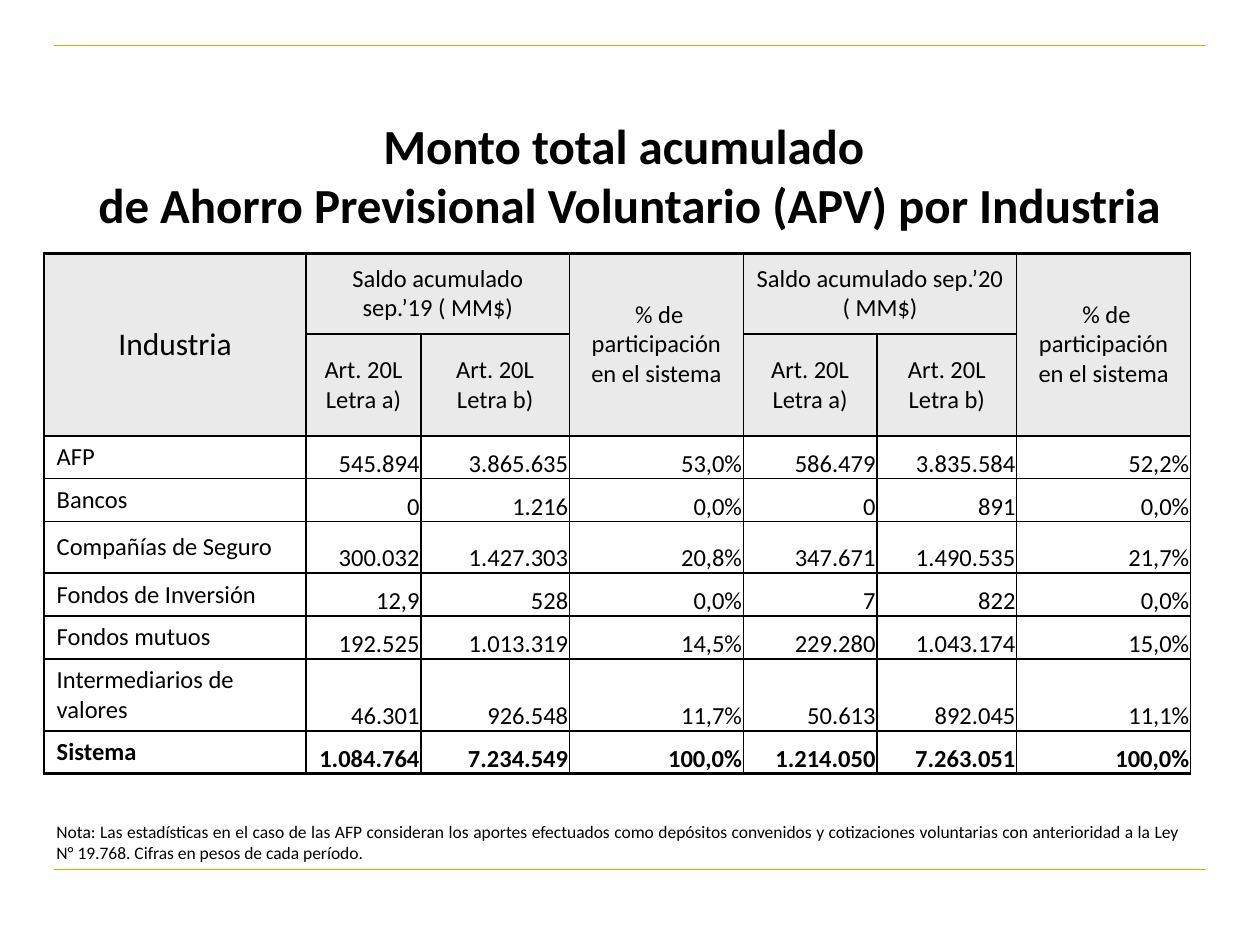
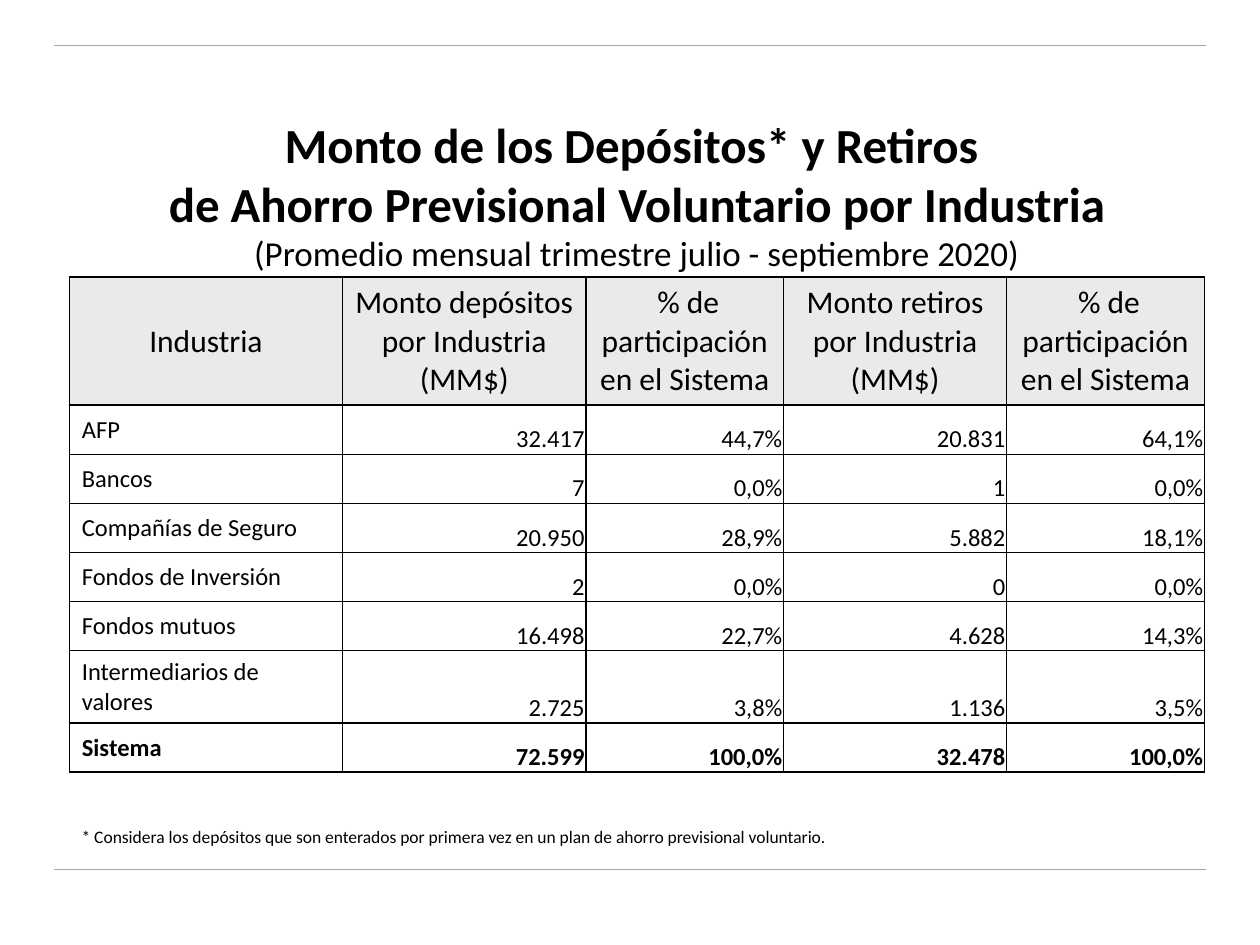
from copy import deepcopy
from dataclasses import dataclass

from lxml import etree
from pptx import Presentation
from pptx.dml.color import RGBColor
from pptx.enum import shapes, text
from pptx.oxml import ns
from pptx.util import Inches, Pt


@dataclass(frozen=True)
class Theme:
    font: str = "Calibri"
    ink: str = "000000"
    rule: str = "FF9900"
    header: str = "EAEAEA"
    body: str = "FFFFFF"
    title: int = 28
    subtitle: int = 20
    heading: int = 18
    cell: int = 14
    note: int = 10


theme = Theme()
LEFT, CENTER, RIGHT, JUSTIFY = (
    text.PP_ALIGN.LEFT, text.PP_ALIGN.CENTER, text.PP_ALIGN.RIGHT, text.PP_ALIGN.JUSTIFY)
MIDDLE, BOTTOM = text.MSO_ANCHOR.MIDDLE, text.MSO_ANCHOR.BOTTOM


def write_text(frame, content, size=theme.cell, bold=False, align=LEFT):
    """Write content: a newline starts a paragraph, a vertical tab breaks a line."""
    for index, block in enumerate(content.split("\n")):
        para = frame.paragraphs[0] if index == 0 else frame.add_paragraph()
        para.alignment = align
        for number, line in enumerate(block.split("\v")):
            if number:
                para.add_line_break()
                para._p[-1].append(deepcopy(span._r.rPr))
            span = para.add_run()
            span.text = line
            span.font.name = theme.font
            span.font.size = Pt(size)
            span.font.bold = bold
            span.font.color.rgb = RGBColor.from_string(theme.ink)


def set_borders(cell, top=1, bottom=1):
    """Draw the four cell borders, widths in points."""
    props = cell._tc.get_or_add_tcPr()
    for side, width in (("L", 1), ("R", 1), ("T", top), ("B", bottom)):
        line = etree.SubElement(props, ns.qn("a:ln" + side), w=str(Pt(width)))
        fill = etree.SubElement(line, ns.qn("a:solidFill"))
        etree.SubElement(fill, ns.qn("a:srgbClr"), val=theme.ink)


# Content of the two slides
industries = ["AFP", "Bancos", "Compañías de Seguro", "Fondos de Inversión",
              "Fondos mutuos", "Intermediarios de valores", "Sistema"]
share = " % de\nparticipación en el sistema"
letters = ["Art. 20L\nLetra a)", "Art. 20L\nLetra b)"]

balances = {
    "title": "Monto total acumulado \vde Ahorro Previsional Voluntario (APV) por Industria",
    "title_at": (0.35, 0.76, 9.29, 1.25),
    "subtitle": "",
    "table_at": (0.35, 2.01),
    "columns": [2.08, 0.91, 1.18, 1.38, 1.06, 1.11, 1.38],
    "rows": [0.64, 0.57, 0.34, 0.34, 0.41, 0.34, 0.34, 0.57, 0.34],
    "headers": [
        ["Industria", "Saldo acumulado sep.’19 ( MM$)", "", share,
         "Saldo acumulado sep.’20 ( MM$)", "", share],
        ["", *letters, "", *letters, ""],
    ],
    "merges": [(0, 0, 1, 0), (0, 1, 0, 2), (0, 3, 1, 3), (0, 4, 0, 5), (0, 6, 1, 6)],
    "heading_size": theme.cell,
    "edge": 2,
    "values": [
        ["545.894", "3.865.635", "53,0%", "586.479", "3.835.584", "52,2%"],
        ["0", "1.216", "0,0%", "0", "891", "0,0%"],
        ["300.032", "1.427.303", "20,8%", "347.671", "1.490.535", "21,7%"],
        ["12,9", "528", "0,0%", "7", "822", "0,0%"],
        ["192.525", "1.013.319", "14,5%", "229.280", "1.043.174", "15,0%"],
        ["46.301", "926.548", "11,7%", "50.613", "892.045", "11,1%"],
        ["1.084.764", "7.234.549", "100,0%", "1.214.050", "7.263.051", "100,0%"],
    ],
    "note": "Nota: Las estadísticas en el caso de las AFP consideran los aportes efectuados "
            "como depósitos convenidos y cotizaciones voluntarias con anterioridad a la Ley "
            "N° 19.768. Cifras en pesos de cada período.",
    "note_at": (0.35, 6.47, 9.1, 0.44),
    "note_align": JUSTIFY,
}

flows = {
    "title": "Monto de los Depósitos* y Retiros \vde Ahorro Previsional Voluntario por Industria",
    "title_at": (0.41, 0.99, 9.29, 1.1),
    "subtitle": "\v(Promedio mensual trimestre julio - septiembre 2020)",
    "table_at": (0.55, 2.2),
    "columns": [2.17, 1.93, 1.57, 1.77, 1.57],
    "rows": [0.92] + [0.39] * len(industries),
    "headers": [["Industria", "Monto depósitos por Industria (MM$)",
                 share.replace("sistema", "Sistema"),
                 "Monto retiros\npor Industria (MM$)",
                 share.replace("sistema", "Sistema")]],
    "merges": [],
    "heading_size": theme.heading,
    "edge": 1,
    "values": [
        ["32.417", "44,7%", "20.831", "64,1%"],
        ["7", "0,0%", "1", "0,0%"],
        ["20.950", "28,9%", "5.882", "18,1%"],
        ["2", "0,0%", "0", "0,0%"],
        ["16.498", "22,7%", "4.628", "14,3%"],
        ["2.725", "3,8%", "1.136", "3,5%"],
        ["72.599", "100,0%", "32.478", "100,0%"],
    ],
    "note": "* Considera los depósitos que son enterados por primera vez en un plan de "
            "ahorro previsional voluntario.",
    "note_at": (0.55, 6.51, 6.2, 0.44),
    "note_align": LEFT,
}

deck = Presentation()
deck.slide_width, deck.slide_height = Inches(10), Inches(7.5)

for content in (balances, flows):
    page = deck.slides.add_slide(deck.slide_layouts[5])

    # Rules above and below the content
    for height in (0.36, 6.9):
        rule = page.shapes.add_connector(
            shapes.MSO_CONNECTOR.STRAIGHT,
            Inches(0.43), Inches(height), Inches(9.57), Inches(height))
        rule.line.color.rgb = RGBColor.from_string(theme.rule)
        rule.line.width = Pt(0.75)
        etree.SubElement(rule._element.spPr, ns.qn("a:effectLst"))

    # Title
    title = page.shapes.title
    title.left, title.top, title.width, title.height = map(Inches, content["title_at"])
    frame = title.text_frame
    frame.auto_size = text.MSO_AUTO_SIZE.NONE
    frame.vertical_anchor = MIDDLE
    write_text(frame, content["title"] + content["subtitle"],
               size=theme.title, bold=True, align=CENTER)
    if content["subtitle"]:
        subtitle = frame.paragraphs[0].runs[-1]
        subtitle.font.size, subtitle.font.bold = Pt(theme.subtitle), False

    # Table grid
    columns, rows, headers = content["columns"], content["rows"], content["headers"]
    left, top = content["table_at"]
    table = page.shapes.add_table(
        len(rows), len(columns), Inches(left), Inches(top),
        Inches(sum(columns)), Inches(sum(rows))).table
    table.first_row = table.horz_banding = False
    for column, width in zip(table.columns, columns):
        column.width = Inches(width)
    for row, height in zip(table.rows, rows):
        row.height = Inches(height)
    for first_row, first_column, last_row, last_column in content["merges"]:
        table.cell(first_row, first_column).merge(table.cell(last_row, last_column))

    # Table cells
    body = [[name, *values] for name, values in zip(industries, content["values"])]
    last = len(rows) - 1
    for r, entries in enumerate(headers + body):
        for c, entry in enumerate(entries):
            cell = table.cell(r, c)
            is_header = r < len(headers)
            set_borders(cell, top=content["edge"] if r == 0 else 1,
                        bottom=content["edge"] if r == last else 1)
            if "%" in entry and not is_header:
                cell.fill.background()
            else:
                cell.fill.solid()
                cell.fill.fore_color.rgb = RGBColor.from_string(
                    theme.header if is_header else theme.body)
            cell.vertical_anchor = MIDDLE
            size, align = theme.cell, LEFT
            if is_header:
                size = theme.heading if c == 0 else content["heading_size"]
                align = CENTER
            elif c > 0:
                align = RIGHT
                cell.vertical_anchor = BOTTOM
                cell.margin_left = cell.margin_right = cell.margin_top = Inches(0.01)
                cell.margin_bottom = 0
            if entry:
                write_text(cell.text_frame, entry, size=size, bold=r == last, align=align)

    # Note
    box = page.shapes.add_textbox(*map(Inches, content["note_at"]))
    box.text_frame.word_wrap = True
    write_text(box.text_frame, content["note"], size=theme.note, align=content["note_align"])

deck.save("out.pptx")
